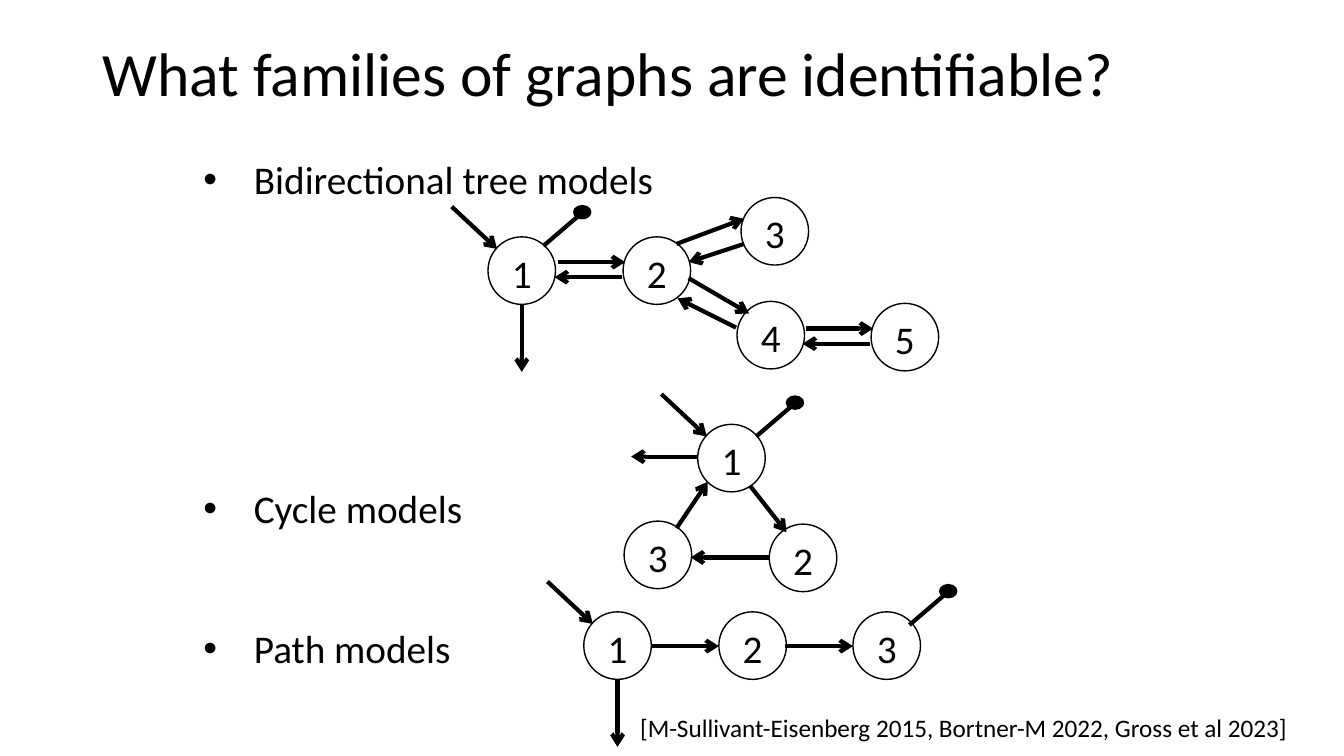
from lxml import etree
from pptx import Presentation
from pptx.dml.color import RGBColor
from pptx.enum.shapes import MSO_CONNECTOR as CXN, MSO_SHAPE as SHAPE
from pptx.enum.text import MSO_ANCHOR as ANCHOR, PP_ALIGN as ALIGN
from pptx.oxml.ns import qn
from pptx.util import Inches, Pt

COLORS = {"ink": "000000", "paper": "FFFFFF"}
NODE = 0.67


class Deck:
    font = "Calibri"

    def __init__(self, width, height):
        self.prs = Presentation()
        self.prs.slide_width, self.prs.slide_height = Inches(width), Inches(height)
        self.s = self.prs.slides.add_slide(self.prs.slide_layouts[6])
        bg = self.s.background.fill
        bg.solid()
        bg.fore_color.rgb = self.color("paper")

    def color(self, name):
        return RGBColor.from_string(COLORS[name])

    def format(self, target, values):
        for name, value in values.items():
            setattr(target, name, value)

    def run(self, p, text, size):
        r = p.add_run()
        r.text = text
        self.format(r.font, {"name": self.font, "size": Pt(size)})
        r.font.color.rgb = self.color("ink")

    def text(self, x, y, w, h, text, size, wrap=True, anchor=ANCHOR.TOP, spacing=None):
        sp = self.s.shapes.add_textbox(*map(Inches, (x, y, w, h)))
        tf = sp.text_frame
        self.format(tf, {"word_wrap": wrap, "vertical_anchor": anchor})
        p = tf.paragraphs[0]
        p.line_spacing = spacing
        self.run(p, text, size)

    def bullets(self, x, y, w, h, items, size):
        sp = self.s.shapes.add_textbox(*map(Inches, (x, y, w, h)))
        tf = sp.text_frame
        tf.word_wrap = True
        for i, (text, gap) in enumerate(items):
            p = tf.add_paragraph() if i else tf.paragraphs[0]
            self.format(p, {"level": 2, "space_before": Pt(gap)})
            pPr = p._p.get_or_add_pPr()
            pPr.set("marL", str(Inches(1.5)))
            pPr.set("indent", str(Inches(-0.5)))
            etree.SubElement(pPr, qn("a:buFont")).set("typeface", "Arial")
            etree.SubElement(pPr, qn("a:buChar")).set("char", "•")
            self.run(p, text, size)

    def ellipse(self, x, y, w, h, filled=False):
        sp = self.s.shapes.add_shape(SHAPE.OVAL, *map(Inches, (x, y, w, h)))
        sp.shadow.inherit = False
        if filled:
            sp.fill.solid()
            sp.fill.fore_color.rgb = self.color("ink")
        else:
            sp.fill.background()
        sp.line.color.rgb = self.color("ink")
        sp.line.width = Pt(1)
        return sp

    def node(self, label, x, y):
        tf = self.ellipse(x, y, NODE, NODE).text_frame
        self.format(tf, {"word_wrap": False, "vertical_anchor": ANCHOR.MIDDLE,
                         "margin_left": 0, "margin_right": 0,
                         "margin_top": Inches(0.04), "margin_bottom": 0})
        p = tf.paragraphs[0]
        p.alignment = ALIGN.CENTER
        self.run(p, label, 28)

    def line(self, x1, y1, x2, y2, arrow=True):
        cxn = self.s.shapes.add_connector(CXN.STRAIGHT, *map(Inches, (x1, y1, x2, y2)))
        cxn.line.color.rgb = self.color("ink")
        cxn.line.width = Pt(3)
        spPr = cxn._element.spPr
        if arrow:
            etree.SubElement(spPr.get_or_add_ln(), qn("a:tailEnd")).set("type", "arrow")
        etree.SubElement(spPr, qn("a:effectLst"))

    def inflow(self, x, y):
        self.line(x - 0.36, y - 0.3, x + 0.09, y + 0.12)

    def leak(self, x, y):
        self.line(x + NODE / 2, y + NODE, x + NODE / 2, y + 2 * NODE)

    def outlet(self, x, y):
        self.line(x, y, x + 0.35, y - 0.3, arrow=False)
        self.ellipse(x + 0.3, y - 0.4, 0.17, 0.13, filled=True)

    def model(self, nodes, edges, outlet, leak_down):
        for i, (x, y) in enumerate(nodes, 1):
            self.node(str(i), x, y)
        for edge in edges:
            self.line(*edge)
        self.inflow(*nodes[0])
        self.outlet(*outlet)
        if leak_down:
            self.leak(*nodes[0])


TREE = dict(
    nodes=[(4.84, 2.35), (6.18, 2.35), (7.35, 1.96), (7.31, 2.99), (8.64, 3.01)],
    edges=[(5.53, 2.6, 6.2, 2.6), (6.17, 2.75, 5.5, 2.75),
           (6.71, 2.42, 7.38, 2.17), (7.38, 2.42, 6.83, 2.6),
           (6.83, 2.76, 7.43, 3.11), (7.3, 3.25, 6.72, 2.96),
           (7.99, 3.26, 8.66, 3.26), (8.63, 3.41, 7.96, 3.41)],
    outlet=(5.39, 2.44), leak_down=True)
CYCLE = dict(
    nodes=[(6.92, 4.21), (7.63, 5.2), (6.19, 5.17)],
    edges=[(7.44, 4.82, 7.8, 5.28), (7.63, 5.53, 6.85, 5.53),
           (6.71, 5.24, 7.02, 4.78), (6.92, 4.53, 6.26, 4.53)],
    outlet=(7.5, 4.33), leak_down=False)
CHAIN = dict(
    nodes=[(5.79, 6.07), (7.13, 6.07), (8.46, 6.07)],
    edges=[(6.46, 6.41, 7.13, 6.41), (7.79, 6.41, 8.46, 6.41)],
    outlet=(9.02, 6.2), leak_down=True)


def main():
    deck = Deck(13.33, 7.5)
    deck.text(0.92, 0.03, 11.5, 1.45, "What families of graphs are identifiable?", 44,
              anchor=ANCHOR.MIDDLE, spacing=0.9)
    deck.bullets(0.92, 1.49, 11.5, 5.28, [("Bidirectional tree models", 0),
                                          ("Cycle models", 201.5),
                                          ("Path models", 66.5)], 28)
    for model in (TREE, CYCLE, CHAIN):
        deck.model(**model)
    deck.text(6.25, 7.02, 6.76, 0.4,
              "[M-Sullivant-Eisenberg 2015, Bortner-M 2022, Gross et al 2023]", 18, wrap=False)
    deck.prs.save("out.pptx")


if __name__ == "__main__":
    main()
